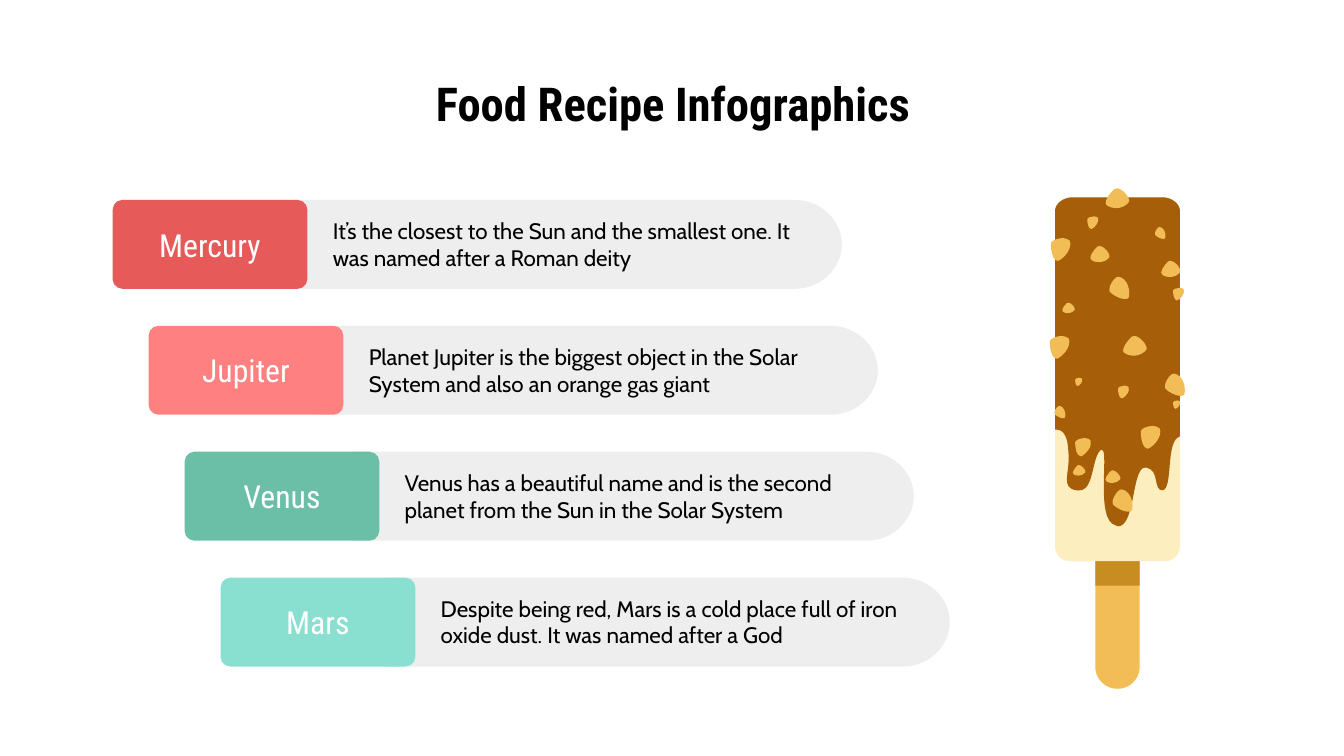
from pptx import Presentation
from pptx.dml.color import RGBColor
from pptx.enum.shapes import MSO_SHAPE
from pptx.enum.text import MSO_ANCHOR, PP_ALIGN
from pptx.oxml.ns import qn
from pptx.util import Cm, Pt

deck = Presentation()
deck.slide_width, deck.slide_height = Cm(25.4), Cm(14.29)
slide = deck.slides.add_slide(deck.slide_layouts[6])
shapes = slide.shapes


def paint(shape, color):
    shape.shadow.inherit = False
    shape.fill.solid()
    shape.fill.fore_color.rgb = RGBColor.from_string(color)
    shape.line.fill.background()


def write(shape, text, font, size, color, align, bold=False):
    frame = shape.text_frame
    frame.word_wrap = True
    frame.vertical_anchor = MSO_ANCHOR.MIDDLE
    para = frame.paragraphs[0]
    para.text, para.alignment = text, align
    para.font.name, para.font.size, para.font.bold = font, Pt(size), bold
    para.font.color.rgb = RGBColor.from_string(color)


# Outlines: a start point, then lines (x, y) and cubic curves (three points).
BAR = [(3.18, 0), (3.18, 1.68), (12.89, 1.68),
       (13.38, 1.68, 13.78, 1.3, 13.78, 0.84),
       (13.78, 0.38, 13.38, 0, 12.89, 0)]
GLAZE = [(0.33, 0), (0.15, 0, 0, 0.13, 0, 0.25), (0, 4.39),
         (0.1, 4.39, 0.23, 4.42, 0.25, 4.78),
         (0.3, 5.21, 0.08, 5.49, 0.41, 5.54), (0.46, 5.54),
         (0.74, 5.54, 0.69, 4.93, 0.86, 4.78), (0.89, 4.78),
         (1.02, 4.78, 0.76, 6.1, 1.14, 6.2), (1.19, 6.22),
         (1.52, 6.22, 1.45, 5.11, 1.7, 5.11), (1.73, 5.11),
         (1.98, 5.16, 1.85, 5.54, 2.03, 5.54),
         (2.24, 5.51, 2.08, 4.6, 2.36, 4.52), (2.36, 0.25),
         (2.36, 0.13, 2.21, 0, 2.03, 0)]
# Nut outlines fill a unit square.
TALL = [(0.52, 0), (0.34, 0, 0, 0.6, 0.22, 0.73),
        (0.34, 0.85, 0.63, 1, 0.8, 1), (0.91, 1, 0.97, 0.97, 0.97, 0.91),
        (1.03, 0.6, 0.91, 0.06, 0.52, 0)]
WEDGE = [(0.56, 0), (0.31, 0, 0, 0.12, 0, 0.24),
         (0, 0.47, 0.06, 1, 0.34, 1), (0.62, 0.88, 1, 0.47, 0.88, 0.12),
         (0.81, 0.06, 0.69, 0, 0.56, 0)]
WIDE = [(0.5, 0), (0.47, 0, 0.44, 0.02, 0.41, 0.04),
        (0.27, 0.24, 0, 0.74, 0.18, 0.88), (0.24, 0.94, 0.36, 1, 0.46, 1),
        (0.64, 1, 0.82, 0.88, 0.91, 0.68), (0.95, 0.48, 0.68, 0, 0.5, 0)]
# Each outline to draw: points, left, top, scale across, scale down, colour
forms = []

title = shapes.add_textbox(Cm(1.3), Cm(1.14), Cm(22.83), Cm(1.6))
write(title, "Food Recipe Infographics", "Roboto Condensed", 25, "000000",
      PP_ALIGN.CENTER, True)

# Bars, under the labels
LEFT, TOP, SHIFT, STEP = 2.13, 3.78, 0.68, 2.38
for i in range(4):
    forms.append((BAR, LEFT + i * SHIFT, TOP + i * STEP, 1, 1, "EEEEEE"))

# Coating and nuts
forms.append((GLAZE, 19.94, 3.73, 1, 1, "A65F08"))
nuts = [
    (TALL, 0.94, [(20.96, 9.25, 0.45), (20.9, 5.23, 0.45), (19.89, 7.67, 0.25),
                  (21.79, 4.29, 0.24), (21.95, 7.06, 0.45)]),
    (WEDGE, 1.05, [(19.84, 6.35, 0.41), (22.17, 5.44, 0.23),
                   (21.13, 7.29, 0.23), (20.55, 4.09, 0.23),
                   (21.56, 8.05, 0.41), (20.32, 8.28, 0.33),
                   (20.32, 7.14, 0.15), (22.17, 7.57, 0.15),
                   (19.86, 4.5, 0.41)]),
    (WIDE, 0.67, [(21.16, 6.35, 0.56), (20.85, 8.89, 0.36), (20.24, 8.79, 0.3),
                  (20.04, 5.72, 0.3), (20.83, 3.56, 0.56), (20.55, 4.65, 0.46),
                  (21.89, 4.93, 0.46)]),
]
for outline, ratio, spots in nuts:
    for x, y, size in spots:
        forms.append((outline, x, y, size, size * ratio, "F2BC57"))

# Stick, its shaded end and the cream body
parts = [
    (MSO_SHAPE.ROUNDED_RECTANGLE, 20.7, 9.27, 0.84, 3.75, 0.5, "F2BC57"),
    (MSO_SHAPE.ROUND_2_SAME_RECTANGLE, 20.7, 9.27, 0.84, 1.8, 0.5, "C78D22"),
    (MSO_SHAPE.ROUNDED_RECTANGLE, 19.94, 3.73, 2.36, 6.88, 0.12, "FCEEBE"),
]
for kind, x, y, w, h, bend, color in parts:
    part = shapes.add_shape(kind, Cm(x), Cm(y), Cm(w), Cm(h))
    part.adjustments[0] = bend
    paint(part, color)

for outline, x, y, across, down, color in forms:
    points = [(Cm(x + seg[k] * across), Cm(y + seg[k + 1] * down))
              for seg in outline for k in range(0, len(seg), 2)]
    pen = shapes.build_freeform(*points[0])
    pen.add_line_segments(points[1:])
    form = pen.convert_to_shape()
    paint(form, color)
    # Turn the three lines of each curve into one cubic segment
    lines = iter(list(form._element.iter(qn("a:lnTo"))))
    for seg in outline[1:]:
        line = next(lines)
        if len(seg) == 6:
            line.tag = qn("a:cubicBezTo")
            for extra in (next(lines), next(lines)):
                line.append(extra[0])
                extra.getparent().remove(extra)

rows = [
    ("Mercury", "E65A5A", "It’s the closest to the Sun and the smallest one. "
     "It was named after a Roman deity"),
    ("Jupiter", "FF8080", "Planet Jupiter is the biggest object in the Solar "
     "System and also an orange gas giant"),
    ("Venus", "6BBFA7", "Venus has a beautiful name and is the second "
     "planet from the Sun in the Solar System"),
    ("Mars", "89DFD0", "Despite being red, Mars is a cold place full of iron "
     "oxide dust. It was named after a God"),
]
for i, (name, color, text) in enumerate(rows):
    x, y = LEFT + i * SHIFT, TOP + i * STEP
    label = shapes.add_shape(MSO_SHAPE.ROUNDED_RECTANGLE, Cm(x), Cm(y),
                             Cm(3.68), Cm(1.68))
    label.adjustments[0] = 0.11
    paint(label, color)
    write(label, name, "Roboto Condensed", 17, "FFFFFF", PP_ALIGN.CENTER)
    note = shapes.add_textbox(Cm(x + 3.91), Cm(y + 0.17), Cm(9.35), Cm(1.32))
    write(note, text, "Cabin", 12, "000000", PP_ALIGN.LEFT)

deck.save("out.pptx")
